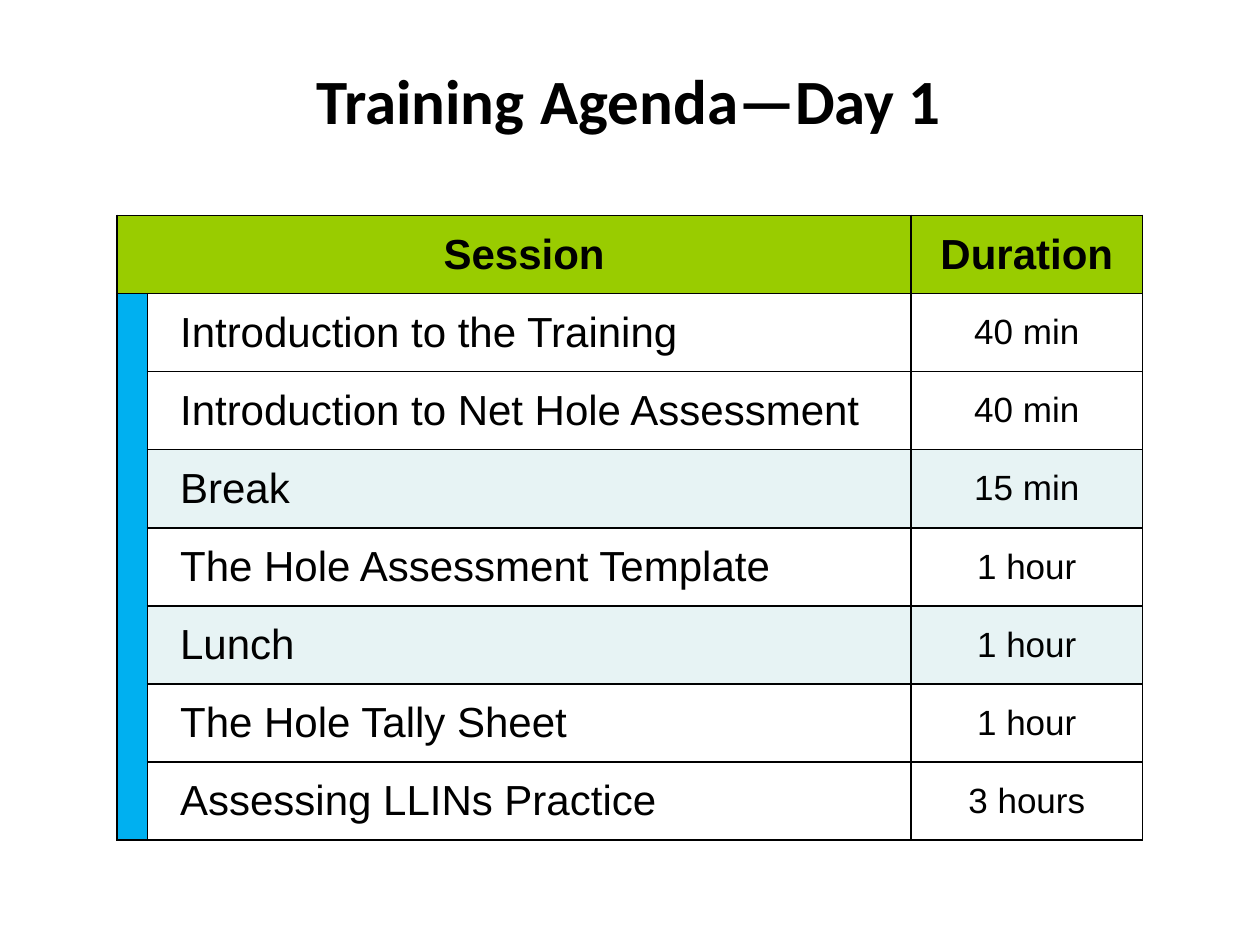
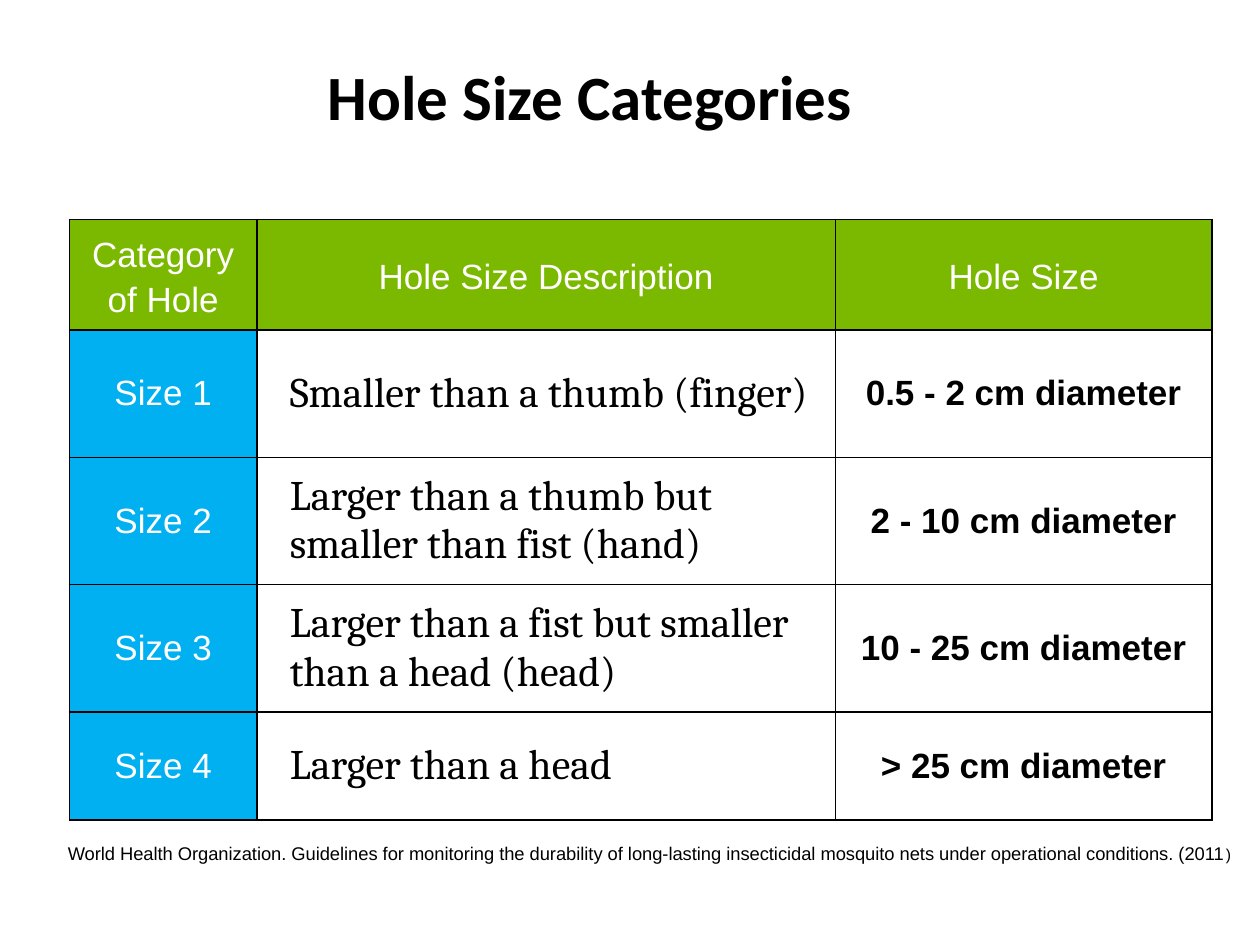
from collections import namedtuple

from lxml.etree import SubElement
from pptx import Presentation
from pptx.dml.color import RGBColor
from pptx.enum.text import MSO_ANCHOR, MSO_AUTO_SIZE, PP_ALIGN
from pptx.oxml.ns import qn
from pptx.util import Inches, Pt

BLACK = RGBColor(0x00, 0x00, 0x00)
WHITE = RGBColor(0xFF, 0xFF, 0xFF)
LIME = RGBColor(0x99, 0xCC, 0x00)
GREEN = RGBColor(0x7B, 0xB8, 0x00)
BLUE = RGBColor(0x00, 0xB0, 0xF0)
PALE = RGBColor(0xE7, 0xF3, 0xF4)

CELL_INSET = 0.07
TEXT_INDENT = 0.26
SESSION_INDENT = 0.23
CENTER, LEFT = PP_ALIGN.CENTER, PP_ALIGN.LEFT

Style = namedtuple(
    "Style", "fill size color bold font align left spacing",
    defaults=(WHITE, 20, BLACK, False, "Arial", CENTER, CELL_INSET, 1))

AGENDA_TITLE = [("Training", 36), (" ", 40), ("Agenda—Day 1", 36)]
AGENDA_HEADS = ("Session", "", "Duration")
AGENDA = [
    ("Introduction to the Training", "40 min"),
    ("Introduction to Net Hole Assessment", "40 min"),
    ("Break", "15 min"),
    ("The Hole Assessment Template", "1 hour"),
    ("Lunch", "1 hour"),
    ("The Hole Tally Sheet", "1 hour"),
    ("Assessing LLINs Practice", "3 hours"),
]
PAUSES = {"Break", "Lunch"}
AGENDA_COLS = (0.24, 6.06, 1.84)
AGENDA_ROW = 0.62

SIZES_TITLE = [("Hole Size Categories", 36)]
SIZES_HEADS = ("Category of Hole", "Hole Size Description", "Hole Size")
SIZES = [
    ("Size 1", "Smaller than a thumb (finger)", "0.5 - 2 cm diameter"),
    ("Size 2", "Larger than a thumb but smaller than fist (hand)", "2 - 10 cm diameter"),
    ("Size 3", "Larger than a fist but smaller than a head (head)", "10 - 25 cm diameter"),
    ("Size 4", "Larger than a head", "> 25 cm diameter"),
]
SIZES_COLS = (1.49, 4.59, 2.99)
SIZES_ROWS = (0.88, 1.01, 1.01, 1.01, 0.86)
SOURCE = [
    ("World Health Organization. Guidelines for monitoring the durability of "
     "long-lasting insecticidal mosquito nets under operational conditions. (2011", 10.5),
    (")", 9),
]


def write_runs(p, runs, font, bold=False):
    p.font.name, p.font.bold, p.font.color.rgb = font, bold, BLACK
    for text, size in runs:
        r = p.add_run()
        r.text, r.font.size = text, Pt(size)


def add_titled_slide(prs, runs, left, top, width):
    s = prs.slides.add_slide(prs.slide_layouts[5])
    title = s.shapes.title
    title.left, title.top = Inches(left), Inches(top)
    title.width, title.height = Inches(width), Inches(1.09)
    tf = title.text_frame
    tf.auto_size = MSO_AUTO_SIZE.NONE
    tf.vertical_anchor = MSO_ANCHOR.MIDDLE
    p = tf.paragraphs[0]
    p.alignment = LEFT
    write_runs(p, runs, "Calibri", True)
    return s


def add_borders(cell):
    tcPr = cell._tc.get_or_add_tcPr()
    for side in "LRTB":
        ln = SubElement(tcPr, qn(f"a:ln{side}"), w=str(Pt(1)))
        SubElement(SubElement(ln, qn("a:solidFill")), qn("a:srgbClr"), val=str(BLACK))


def fill_cell(cell, text, style):
    add_borders(cell)
    cell.fill.solid()
    cell.fill.fore_color.rgb = style.fill
    cell.vertical_anchor = MSO_ANCHOR.MIDDLE
    cell.margin_left, cell.margin_right = Inches(style.left), Inches(CELL_INSET)
    cell.margin_top = cell.margin_bottom = 0
    p = cell.text_frame.paragraphs[0]
    p.text, p.alignment, p.line_spacing = text, style.align, style.spacing
    p.font.name, p.font.size, p.font.bold = style.font, Pt(style.size), style.bold
    p.font.color.rgb = style.color


def add_grid(s, left, top, cols, heights, rows):
    frame = s.shapes.add_table(len(heights), len(cols), Inches(left), Inches(top),
                               Inches(sum(cols)), Inches(sum(heights)))
    table = frame.table
    table.first_row = table.horz_banding = False
    for column, width in zip(table.columns, cols):
        column.width = Inches(width)
    for row, height, entries in zip(table.rows, heights, rows):
        row.height = Inches(height)
        for cell, (text, style) in zip(row.cells, entries):
            fill_cell(cell, text, style)
    return table


def add_agenda(prs):
    s = add_titled_slide(prs, AGENDA_TITLE, 2.41, 0.22, 7.59)
    head = Style(LIME, 24, bold=True)
    session_head = head._replace(left=SESSION_INDENT)
    rows = [list(zip(AGENDA_HEADS, (session_head, head, head)))]
    for session, duration in AGENDA:
        time = Style(PALE if session in PAUSES else WHITE)
        name = time._replace(size=24, align=LEFT, left=TEXT_INDENT)
        rows.append([("", Style(BLUE)), (session, name), (duration, time)])
    table = add_grid(s, 0.93, 1.71, AGENDA_COLS, [AGENDA_ROW] * len(rows), rows)
    table.cell(0, 0).merge(table.cell(0, 1))
    table.cell(1, 0).merge(table.cell(len(AGENDA), 0))


def add_sizes(prs):
    s = add_titled_slide(prs, SIZES_TITLE, 2.5, 0.21, 7.36)
    head = Style(GREEN, color=WHITE, spacing=1.15)
    body = (Style(BLUE, color=WHITE),
            Style(size=24, font="Cambria", align=LEFT, left=TEXT_INDENT),
            Style(bold=True))
    rows = [[(text, head) for text in SIZES_HEADS]]
    rows += [list(zip(texts, body)) for texts in SIZES]
    add_grid(s, 0.55, 1.74, SIZES_COLS, SIZES_ROWS, rows)

    box = s.shapes.add_textbox(Inches(0.17), Inches(6.63), Inches(9.7), Inches(0.28))
    tf = box.text_frame
    tf.word_wrap = False
    tf.vertical_anchor = MSO_ANCHOR.MIDDLE
    p = tf.paragraphs[0]
    p.alignment = PP_ALIGN.RIGHT
    write_runs(p, SOURCE, "Arial")


def main():
    prs = Presentation()
    prs.slide_width, prs.slide_height = Inches(10), Inches(7.5)
    add_agenda(prs)
    add_sizes(prs)
    prs.save("out.pptx")


if __name__ == "__main__":
    main()
